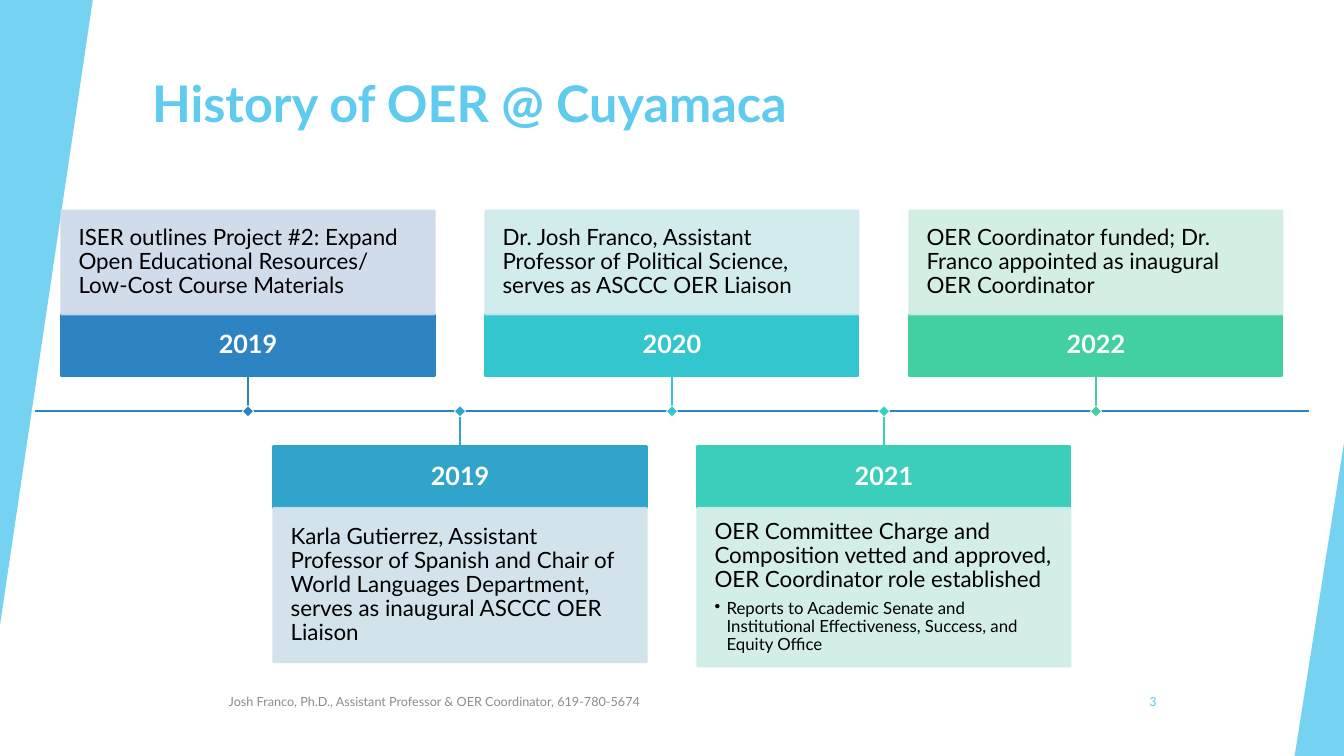
"""Build the timeline slide on the history of OER at Cuyamaca."""
import pptx
import pptx.dml.color
import pptx.enum.shapes
import pptx.enum.text
import pptx.oxml.ns
import pptx.util
from lxml import etree
from pptx.util import Inches

SHAPE = pptx.enum.shapes.MSO_SHAPE
ALIGN = pptx.enum.text.PP_ALIGN
ANCHOR = pptx.enum.text.MSO_ANCHOR

SKY = "5FCBEF"
WHITE = "FFFFFF"
AXIS_Y = 4.08
CARD_LEFT, CARD_WIDTH = 0.61, 3.7
CARD_PITCH = 8.41 / 4
HEADING_HEIGHT = 0.61
UPPER_HEADING, LOWER_HEADING = 3.12, 4.43
UPPER_BODY_HEIGHT = 1.03
DIAMOND = 0.08

EVENTS = [
    ("2019", "2E83C3", "CDD9E9", UPPER_BODY_HEIGHT,
     "ISER outlines Project #2: Expand Open Educational Resources/ "
     "Low-Cost Course Materials", None),
    ("2019", "30A4C9", "CEE1EB", 1.53,
     "Karla Gutierrez, Assistant Professor of Spanish and Chair of World "
     "Languages Department, serves as inaugural ASCCC OER Liaison", None),
    ("2020", "34C6CE", "CEE9EC", UPPER_BODY_HEIGHT,
     "Dr. Josh Franco, Assistant Professor of Political Science, "
     "serves as ASCCC OER Liaison", None),
    ("2021", "3BCFBB", "CFEDE7", 1.57,
     "OER Committee Charge and Composition vetted and approved, "
     "OER Coordinator role established",
     "Reports to Academic Senate and Institutional Effectiveness, "
     "Success, and Equity Office"),
    ("2022", "42D0A2", "CFEEE0", UPPER_BODY_HEIGHT,
     "OER Coordinator funded; Dr. Franco appointed as inaugural "
     "OER Coordinator", None),
]


def rgb(color):
    return pptx.dml.color.RGBColor.from_string(color)


def add_xml(parent, tag, **attributes):
    return etree.SubElement(parent, pptx.oxml.ns.qn(tag), **attributes)


class TimelineSlide:
    font = "Lato"

    def __init__(self, presentation):
        self.slide = presentation.slides.add_slide(presentation.slide_layouts[6])

    def paint(self, fill, color, opacity):
        fill.solid()
        fill.fore_color.rgb = rgb(color)
        if opacity < 100:
            element = fill._xPr.find(".//" + pptx.oxml.ns.qn("a:srgbClr"))
            add_xml(element, "a:alpha", val=str(opacity * 1000))

    def shape(self, kind, box, color, line=None, line_width=1.5, opacity=100):
        shape = self.slide.shapes.add_shape(kind, *map(Inches, box))
        shape.shadow.inherit = False
        self.paint(shape.fill, color, opacity)
        if line:
            shape.line.width = pptx.util.Pt(line_width)
            self.paint(shape.line.fill, line, opacity)
        else:
            shape.line.fill.background()
        return shape

    def triangle(self, box, rotation=0):
        shape = self.shape(SHAPE.ISOSCELES_TRIANGLE, box, SKY, opacity=85)
        shape.adjustments[0] = 1
        shape.rotation = rotation

    def frame(self, shape, anchor, inset):
        frame = shape.text_frame
        frame.word_wrap = True
        frame.vertical_anchor = anchor
        if inset:
            frame.margin_left = frame.margin_right = Inches(inset)
            frame.margin_top = frame.margin_bottom = Inches(inset)
        return frame

    def style(self, paragraph, size, color, bold=False, align=ALIGN.LEFT, spacing=None):
        paragraph.alignment = align
        paragraph.line_spacing = spacing
        for run in paragraph.runs:
            run.font.name = self.font
            run.font.size = pptx.util.Pt(size)
            run.font.bold = bold
            run.font.color.rgb = rgb(color)

    def text(self, box, text, size, color, bold=False, align=ALIGN.LEFT,
             anchor=ANCHOR.MIDDLE):
        shape = self.slide.shapes.add_textbox(*map(Inches, box))
        frame = self.frame(shape, anchor, None)
        frame.text = text
        self.style(frame.paragraphs[0], size, color, bold, align)

    def bullet(self, frame, text):
        paragraph = frame.add_paragraph()
        paragraph.text = text
        paragraph.level = 1
        self.style(paragraph, 12, "000000", spacing=0.9)
        paragraph.space_before = pptx.util.Pt(5.6)
        properties = paragraph._p.get_or_add_pPr()
        properties.set("marL", str(Inches(0.12)))
        properties.set("indent", str(-Inches(0.12)))
        add_xml(properties, "a:buChar", char="•")

    def line(self, start, end, color, width):
        connector = self.slide.shapes.add_connector(
            pptx.enum.shapes.MSO_CONNECTOR.STRAIGHT, *map(Inches, start + end))
        connector.line.color.rgb = rgb(color)
        connector.line.width = pptx.util.Pt(width)
        add_xml(connector._element.spPr, "a:effectLst")
        return connector

    def card(self, index, year, color, tint, body_height, text, detail):
        left = CARD_LEFT + index * CARD_PITCH
        center = left + CARD_WIDTH / 2
        upper = index % 2 == 0
        top = UPPER_HEADING if upper else LOWER_HEADING
        bottom = top + HEADING_HEIGHT
        body_top = top - body_height if upper else bottom

        heading = self.shape(SHAPE.RECTANGLE, (left, top, CARD_WIDTH, HEADING_HEIGHT),
                             color, color)
        frame = self.frame(heading, ANCHOR.MIDDLE, 0.1)
        frame.text = year
        self.style(frame.paragraphs[0], 18, WHITE, True, ALIGN.CENTER, 0.9)

        body = self.shape(SHAPE.RECTANGLE, (left, body_top, CARD_WIDTH, body_height),
                          tint, tint, opacity=90)
        frame = self.frame(body, ANCHOR.MIDDLE, 0.17)
        frame.text = text
        self.style(frame.paragraphs[0], 16, "000000", spacing=0.9)
        if detail:
            self.bullet(frame, detail)

        stem = self.line((center, bottom if upper else top), (center, AXIS_Y), color, 1)
        stem.begin_connect(heading, 2 if upper else 0)
        marker = self.shape(
            SHAPE.RECTANGLE,
            (center - DIAMOND / 2, AXIS_Y - DIAMOND / 2, DIAMOND, DIAMOND),
            color, WHITE, 0.5)
        marker.rotation = 45


def main():
    presentation = pptx.Presentation()
    presentation.slide_width = Inches(13.33)
    presentation.slide_height = Inches(7.5)
    timeline = TimelineSlide(presentation)
    timeline.text((1.41, 0.67, 11.15, 1.2), "History of OER @ Cuyamaca", 36, SKY,
                  bold=True, anchor=ANCHOR.TOP)
    timeline.triangle((0, 0, 0.92, 6.2), rotation=180)
    timeline.text((2.17, 6.76, 6.89, 0.4),
                  "Josh Franco, Ph.D., Assistant Professor & OER Coordinator, 619-780-5674",
                  9, "8C8C8C")
    timeline.text((10.82, 6.76, 0.75, 0.4), "3", 9, SKY, align=ALIGN.RIGHT)
    timeline.triangle((12.84, 4.39, 0.49, 3.11))
    timeline.line((0.35, AXIS_Y), (12.98, AXIS_Y), "2E83C3", 1.5)
    for index, event in enumerate(EVENTS):
        timeline.card(index, *event)
    presentation.save("out.pptx")


if __name__ == "__main__":
    main()
